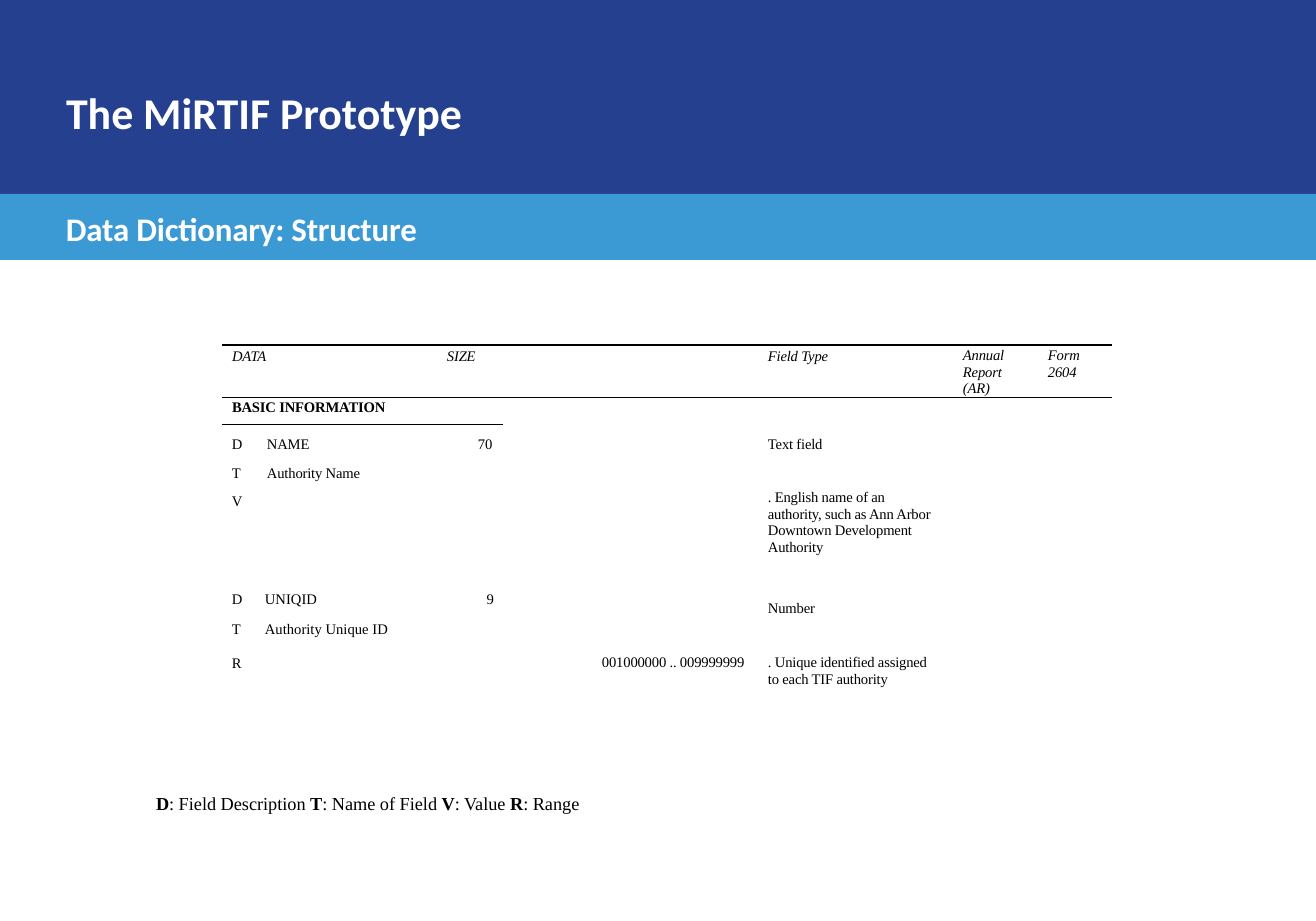
"""Build the data dictionary structure slide."""
from itertools import pairwise
from lxml import etree
from pptx import Presentation
from pptx import util as u
from pptx.dml.color import RGBColor
from pptx.enum import shapes, text
from pptx.oxml.ns import qn

SCALE = u.Inches(10) / 1316
WIDTH, HEIGHT = 1316, 921
SERIF, SANS = "Times New Roman", "Calibri"
BLACK, WHITE = "000000", "FFFFFF"
PLAIN_TABLE = "{2D5ABB26-0587-4C30-8999-92F81FD0307C}"

TITLE = ("The MiRTIF Prototype", 66, 86, 1188, 47)
SUBTITLE = ("Data Dictionary: Structure", 66, 209, 869, 40)
BANDS = [("25408F", 0, 194), ("3B99D4", 194, 66)]

HEADERS = [
    ("DATA", 232, 348, 50),
    ("SIZE", 447, 348, 40),
    ("Field Type", 768, 348, 80),
    ("Annual Report (AR)", 963, 347, 48),
    ("Form 2604", 1048, 347, 40),
]
SECTION = ("BASIC INFORMATION", 232, 398, 170)
NAME_FIELD = ("D\tNAME\nT\tAuthority Name\nV", 232, 435, 140)
NAME_TAB = 35
ENTRIES = [
    ("70", 478, 436, 20),
    ("Text field", 768, 436, 70),
    (". English name of an authority, such as Ann Arbor Downtown Development Authority",
     768, 489, 174),
    ("Number", 768, 600, 60),
    ("R", 232, 655, 15),
]
RANGE_FIELD = ("001000000 .. 009999999\t. Unique identified assigned\nto each TIF authority",
               602, 654, 350)
RANGE_TAB = 166

UNIQUE_ROWS = [("D", "UNIQID", "9"), ("T", "Authority Unique ID", "")]
UNIQUE_LEFT, UNIQUE_TOP, UNIQUE_ROW_HEIGHT = 226, 591, 30
UNIQUE_COLUMNS = [(26, 6, text.PP_ALIGN.LEFT), (183, 13, text.PP_ALIGN.LEFT),
                  (62, 0, text.PP_ALIGN.RIGHT)]
UNIQUE_RIGHT_MARGIN = 3

TOP_EDGES = [222, 437, 440, 503, 505, 758, 761, 953, 955, 1037, 1040, 1112]
RULES = [(start, end, 345, 1.54) for start, end in pairwise(TOP_EDGES)]
RULES += [(222, 1112, 398, 0.58), (222, 503, 425, 0.58)]

LEGEND = [("D", "Field Description "), ("T", "Name of Field "), ("V", "Value "), ("R", "Range")]
LEGEND_PLACE = (156, 792, 1000)


def px(value):
    """Turn slide pixels into EMU."""
    return u.Emu(round(value * SCALE))


def color(value):
    """Turn a hex string into a colour."""
    return RGBColor.from_string(value)


def style(paragraph, size, font=SERIF, fill=BLACK, bold=False, italic=False):
    """Format every run of a paragraph."""
    for run in paragraph.runs:
        run.font.size, run.font.name = u.Pt(size), font
        run.font.bold, run.font.italic = bold, italic
        run.font.color.rgb = color(fill)


def prepare(frame):
    """Remove the insets of a text frame and anchor it at the top."""
    frame.margin_left = frame.margin_right = frame.margin_top = frame.margin_bottom = 0
    frame.word_wrap, frame.auto_size = True, text.MSO_AUTO_SIZE.NONE
    frame.vertical_anchor = text.MSO_ANCHOR.TOP


def add_text(slide, content, left, top, width, height=18, size=8, spacing=None, **look):
    """Add a text box and return its text frame."""
    box = slide.shapes.add_textbox(px(left), px(top), px(width), px(height))
    frame = box.text_frame
    prepare(frame)
    frame.text = content
    for paragraph in frame.paragraphs:
        style(paragraph, size, **look)
        if spacing:
            paragraph.line_spacing = u.Pt(spacing)
        for run in paragraph.runs:
            run._r.get_or_add_rPr().set("spc", "-10")
    return frame


def add_tab(paragraph, position):
    """Give a paragraph one left tab stop."""
    stops = etree.SubElement(paragraph._p.get_or_add_pPr(), qn("a:tabLst"))
    etree.SubElement(stops, qn("a:tab"), pos=str(px(position)), algn="l")


def add_bands(slide):
    """Put the coloured bands behind the title."""
    for position, (fill, top, height) in enumerate(BANDS):
        band = slide.shapes.add_shape(shapes.MSO_SHAPE.RECTANGLE, 0, px(top), px(WIDTH), px(height))
        band.shadow.inherit = False
        band.fill.solid()
        band.fill.fore_color.rgb = color(fill)
        band.line.fill.background()
        band._element.getparent().insert(2 + position, band._element)


def add_title(slide):
    """Place and format the title placeholder."""
    content, left, top, width, height = TITLE
    title = slide.shapes.title
    title.left, title.top, title.width, title.height = px(left), px(top), px(width), px(height)
    prepare(title.text_frame)
    title.text_frame.text = content
    paragraph = title.text_frame.paragraphs[0]
    paragraph.alignment = text.PP_ALIGN.LEFT
    style(paragraph, 24, SANS, WHITE, bold=True)


def add_rule(slide, start, end, y, weight):
    """Draw a horizontal rule."""
    rule = slide.shapes.add_connector(shapes.MSO_CONNECTOR.STRAIGHT, px(start), px(y), px(end), px(y))
    rule.line.color.rgb = color(BLACK)
    rule.line.width = u.Pt(weight)
    etree.SubElement(rule._element.spPr, qn("a:effectLst"))


def add_fields(slide):
    """Add the tabbed name and range fields."""
    name_lines = add_text(slide, *NAME_FIELD, height=75).paragraphs
    for paragraph in name_lines:
        add_tab(paragraph, NAME_TAB)
    for paragraph in name_lines[1:]:
        paragraph.line_spacing = u.Pt(15.1)
    name_lines[1].space_before = u.Pt(0.8)
    first, second = add_text(slide, *RANGE_FIELD, height=34, spacing=9.1).paragraphs
    add_tab(first, RANGE_TAB)
    second._p.get_or_add_pPr().set("marL", str(px(RANGE_TAB)))


def add_unique_table(slide):
    """Add the table of the unique identifier."""
    width = sum(column[0] for column in UNIQUE_COLUMNS)
    table = slide.shapes.add_table(
        len(UNIQUE_ROWS), len(UNIQUE_COLUMNS), px(UNIQUE_LEFT), px(UNIQUE_TOP),
        px(width), px(UNIQUE_ROW_HEIGHT * len(UNIQUE_ROWS))).table
    table.first_row = table.horz_banding = False
    table._tbl.tblPr.find(qn("a:tableStyleId")).text = PLAIN_TABLE
    for column, (width, margin, alignment) in enumerate(UNIQUE_COLUMNS):
        table.columns[column].width = px(width)
        for row, values in enumerate(UNIQUE_ROWS):
            cell = table.cell(row, column)
            cell.fill.background()
            cell.margin_left, cell.margin_right = px(margin), px(UNIQUE_RIGHT_MARGIN)
            cell.margin_top = cell.margin_bottom = 0
            paragraph = cell.text_frame.paragraphs[0]
            paragraph.add_run().text = values[column]
            paragraph.alignment = alignment
            style(paragraph, 8)


def add_legend(slide):
    """Add the key to the field letters."""
    paragraph = add_text(slide, "", *LEGEND_PLACE, height=24).paragraphs[0]
    for letter, meaning in LEGEND:
        paragraph.add_run().text = letter
        paragraph.add_run().text = f": {meaning}"
    style(paragraph, 10)
    for run in paragraph.runs[::2]:
        run.font.bold = True


def main():
    """Build and save the slide."""
    presentation = Presentation()
    presentation.slide_width, presentation.slide_height = px(WIDTH), px(HEIGHT)
    slide = presentation.slides.add_slide(presentation.slide_layouts[5])
    add_bands(slide)
    add_title(slide)
    add_text(slide, *SUBTITLE, size=18, font=SANS, fill=WHITE, bold=True)
    for header in HEADERS:
        add_text(slide, *header, spacing=9.1, italic=True)
    for rule in RULES:
        add_rule(slide, *rule)
    add_text(slide, *SECTION, bold=True)
    add_fields(slide)
    for entry in ENTRIES:
        add_text(slide, *entry, spacing=9.1)
    add_unique_table(slide)
    add_legend(slide)
    presentation.save("out.pptx")


if __name__ == "__main__":
    main()
